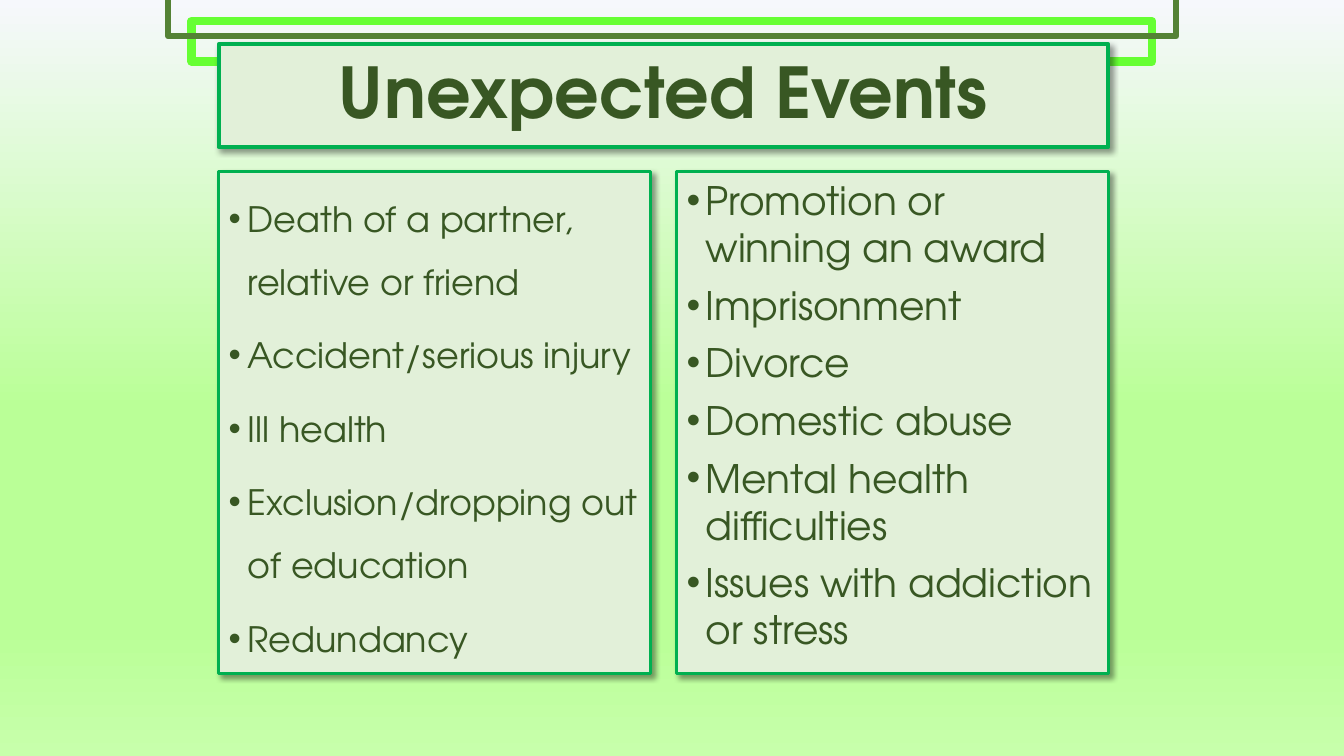
from lxml.etree import SubElement
from pptx import Presentation
from pptx.dml.color import RGBColor
from pptx.enum.shapes import MSO_SHAPE
from pptx.enum.text import MSO_ANCHOR, MSO_AUTO_SIZE, PP_ALIGN
from pptx.oxml.ns import qn
from pptx.util import Pt

# Content
HEADING = "Unexpected Events"
COLUMNS = [
    {"size": 25, "spacing": 1.5, "events": [
        "Death of a partner, relative or friend",
        "Accident/serious injury",
        "Ill health",
        "Exclusion/dropping out of education",
        "Redundancy",
    ]},
    {"size": 28, "spacing": 1.0, "events": [
        "Promotion or winning an award",
        "Imprisonment",
        "Divorce",
        "Domestic abuse",
        "Mental health difficulties",
        "Issues with addiction or stress",
    ]},
]

# Style
FONT = "TeX Gyre Adventor"
COLORS = {"text": "385723", "panel": "E2F0D9", "border": "00B050",
          "bright": "66FF33", "moss": "548235", "shadow": "000000"}
SKY = [(0, "F6F8FC"), (54, "BAFF97"), (83, "BAFF97"), (100, "C7FFAB")]

# Layout, in points
PANEL_LEFT, PANEL_WIDTH = 156.2, 635.4
HEADING_TOP, HEADING_HEIGHT = 31.7, 73.4
COLUMN_TOP, COLUMN_HEIGHT, GUTTER = 122.4, 358.6, 18.8
COLUMN_WIDTH = (PANEL_WIDTH - GUTTER) / 2
BULLET_INDENT = 13.5
FRAMES = [  # left, top, width, height, colour, line width
    (136.8, 15.1, 686.2, 28.8, "bright", 6),
    (120.2, -2.9, 720, 28.8, "moss", 4.5),
]


def rgb(name):
    return RGBColor.from_string(COLORS[name])


def place(part, left, top, width, height):
    part.left, part.top = Pt(left), Pt(top)
    part.width, part.height = Pt(width), Pt(height)


def outline(part, color, width):
    part.line.color.rgb = rgb(color)
    part.line.width = Pt(width)


def style_panel(panel, border):
    panel.fill.solid()
    panel.fill.fore_color.rgb = rgb("panel")
    outline(panel, "border", border)
    effects = SubElement(panel._element.spPr, qn("a:effectLst"))
    shadow = SubElement(effects, qn("a:outerShdw"), blurRad=str(Pt(4)),
                        dist=str(Pt(3)), dir="2700000", algn="tl", rotWithShape="0")
    tint = SubElement(shadow, qn("a:srgbClr"), val=COLORS["shadow"])
    SubElement(tint, qn("a:alpha"), val="40000")


def write(frame, lines, size, spacing, bold=False, align=PP_ALIGN.LEFT,
          anchor=MSO_ANCHOR.TOP, before=0, bullet=None):
    frame.word_wrap = True
    frame.auto_size = MSO_AUTO_SIZE.NONE
    frame.vertical_anchor = anchor
    for i, line in enumerate(lines):
        paragraph = frame.add_paragraph() if i else frame.paragraphs[0]
        paragraph.alignment = align
        paragraph.line_spacing = spacing
        paragraph.space_before = Pt(before)
        if bullet:
            props = paragraph._p.get_or_add_pPr()
            props.set("marL", str(Pt(BULLET_INDENT)))
            props.set("indent", str(-Pt(BULLET_INDENT)))
            SubElement(props, qn("a:buChar"), char=bullet)
        run = paragraph.add_run()
        run.text = line
        run.font.name, run.font.size, run.font.bold = FONT, Pt(size), bold
        run.font.color.rgb = rgb("text")


prs = Presentation()
prs.slide_width, prs.slide_height = Pt(960), Pt(540)
slide = prs.slides.add_slide(prs.slide_layouts.get_by_name("Two Content"))
heading, *column_bodies = slide.placeholders

# Background gradient, top to bottom
sky = slide.background.fill
sky.gradient()
sky.gradient_angle = 270
stops = next(slide._element.iter(qn("a:gsLst")))
for stop in list(stops):
    stops.remove(stop)
for position, color in SKY:
    stop = SubElement(stops, qn("a:gs"), pos=str(position * 1000))
    SubElement(stop, qn("a:srgbClr"), val=color)

# Hollow frames behind the heading
for left, top, width, height, color, weight in FRAMES:
    frame = slide.shapes.add_shape(MSO_SHAPE.RECTANGLE, Pt(left), Pt(top),
                                   Pt(width), Pt(height))
    frame.shadow.inherit = False
    frame.fill.background()
    outline(frame, color, weight)
    heading._element.addprevious(frame._element)

# Heading
place(heading, PANEL_LEFT, HEADING_TOP, PANEL_WIDTH, HEADING_HEIGHT)
style_panel(heading, 3)
write(heading.text_frame, [HEADING], 50, 0.9, bold=True,
      align=PP_ALIGN.CENTER, anchor=MSO_ANCHOR.MIDDLE)

# Two columns of events
for i, (body, column) in enumerate(zip(column_bodies, COLUMNS)):
    place(body, PANEL_LEFT + i * (COLUMN_WIDTH + GUTTER), COLUMN_TOP,
          COLUMN_WIDTH, COLUMN_HEIGHT)
    style_panel(body, 2.25)
    write(body.text_frame, column["events"], column["size"], column["spacing"],
          before=7.5, bullet="•")

prs.save("out.pptx")
